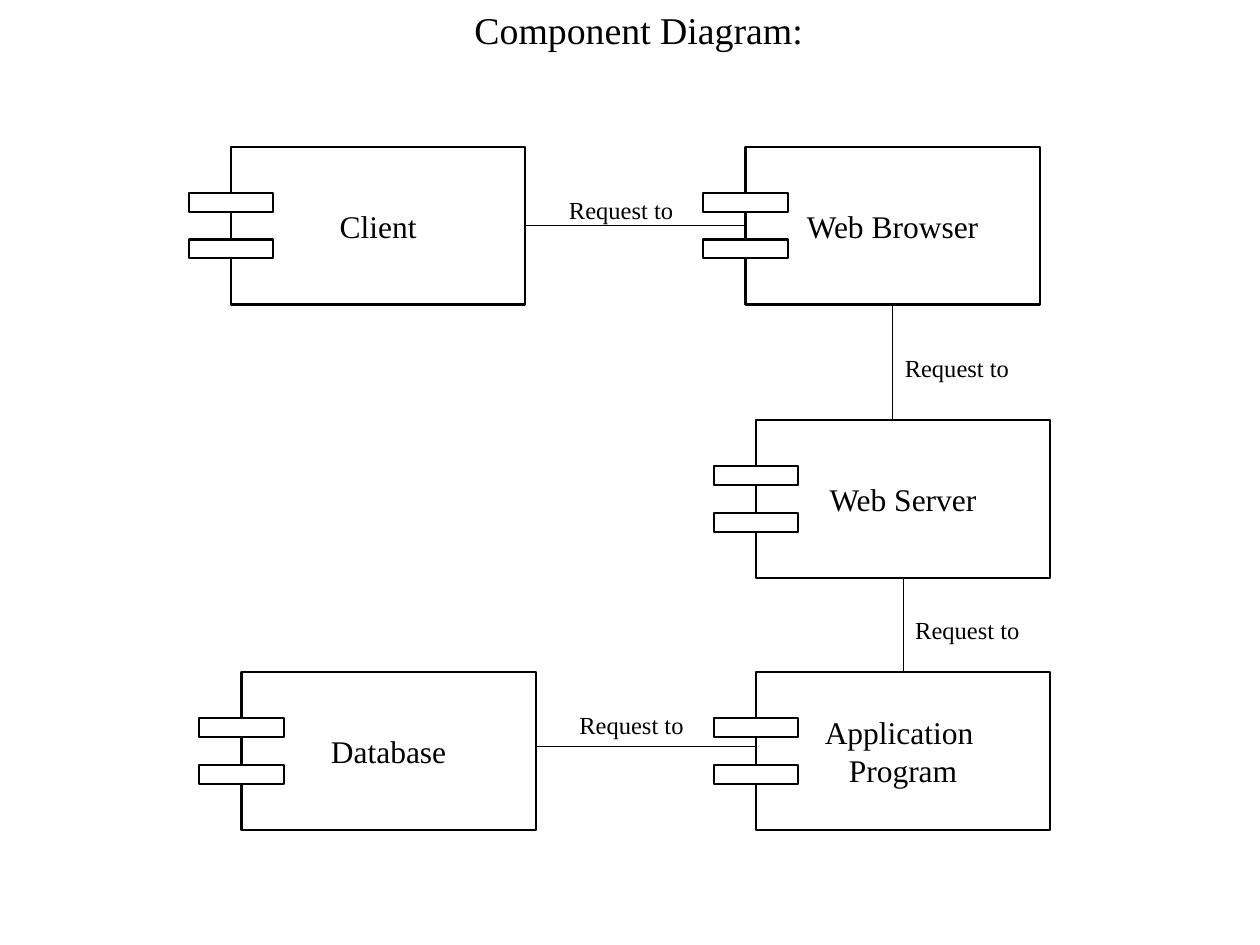
from dataclasses import dataclass

from lxml import etree
from pptx import Presentation
from pptx.dml.color import RGBColor
from pptx.enum.shapes import MSO_CONNECTOR, MSO_SHAPE
from pptx.enum.text import MSO_ANCHOR, MSO_AUTO_SIZE, PP_ALIGN
from pptx.oxml.ns import qn
from pptx.util import Cm, Pt

RECT = MSO_SHAPE.RECTANGLE
LINE = MSO_CONNECTOR.STRAIGHT
MIDDLE, TOP = MSO_ANCHOR.MIDDLE, MSO_ANCHOR.TOP
LEFT, CENTER = PP_ALIGN.LEFT, PP_ALIGN.CENTER
NO_FIT, GROW = MSO_AUTO_SIZE.NONE, MSO_AUTO_SIZE.SHAPE_TO_FIT_TEXT


@dataclass(frozen=True)
class Theme:
    ink: RGBColor = RGBColor(0, 0, 0)
    paper: RGBColor = RGBColor(255, 255, 255)
    font: str = "Times New Roman"
    title: float = 21.6
    body: float = 18
    label: float = 14
    edge: float = 1.25
    link: float = 0.5


@dataclass(frozen=True)
class Part:
    """A component; sizes and places are in centimetres."""
    text: str
    x: float
    y: float
    w: float = 5.93
    h: float = 3.18

    @property
    def mid(self) -> float:
        return self.x + self.w / 2


@dataclass(frozen=True)
class Link:
    start: tuple[float, float]
    end: tuple[float, float]
    label: tuple[float, float]


THEME = Theme()
LUG_X, LUG_W, LUG_H = -0.85, 1.7, 0.38
LUG_ROWS = (1.87, 0.93)
LABEL_W, LABEL_H = 2.74, 0.86

CLIENT = Part("Client", 4.66, 2.96)
BROWSER = Part("Web Browser", 15.03, 2.96)
DATA = Part("Database", 4.87, 13.55)
APP = Part("Application \nProgram", 15.24, 13.55)
SERVER = Part("Web Server", 15.24, 8.47)
PARTS = (CLIENT, BROWSER, DATA, APP, SERVER)


def across(a: Part, b: Part, drop: float, label: tuple[float, float]) -> Link:
    """Join two parts side by side, at a drop below their top edge."""
    return Link((a.x + a.w, a.y + drop), (b.x, a.y + drop), label)


def down(a: Part, b: Part, label: tuple[float, float]) -> Link:
    return Link((a.mid, a.y + a.h), (a.mid, b.y), label)


LINKS = (
    across(CLIENT, BROWSER, 1.59, (11.22, 3.81)),
    across(DATA, APP, 1.49, (11.43, 14.18)),
    down(BROWSER, SERVER, (17.99, 6.99)),
    down(SERVER, APP, (18.2, 12.28)),
)


def write(shape, text: str, size: float, align=LEFT, anchor=TOP, fit=NO_FIT) -> None:
    frame = shape.text_frame
    frame.text = text
    style = {"word_wrap": True, "auto_size": fit, "vertical_anchor": anchor}
    for key, value in style.items():
        setattr(frame, key, value)
    for para in frame.paragraphs:
        para.alignment = align
        for key, value in {"name": THEME.font, "size": Pt(size)}.items():
            setattr(para.font, key, value)
        para.font.color.rgb = THEME.ink


def box(shapes, x: float, y: float, w: float, h: float):
    shape = shapes.add_shape(RECT, Cm(x), Cm(y), Cm(w), Cm(h))
    shape.shadow.inherit = False
    shape.fill.solid()
    shape.fill.fore_color.rgb = THEME.paper
    shape.line.color.rgb = THEME.ink
    shape.line.width = Pt(THEME.edge)
    return shape


def draw_part(shapes, part: Part) -> None:
    """Draw the body of a component with its two lugs."""
    body = box(shapes, part.x, part.y, part.w, part.h)
    write(body, part.text, THEME.body, CENTER, MIDDLE)
    for row in LUG_ROWS:
        box(shapes, part.x + LUG_X, part.y + row, LUG_W, LUG_H)


def draw_link(shapes, link: Link) -> None:
    ends = (Cm(n) for n in link.start + link.end)
    line = shapes.add_connector(LINE, *ends)
    line.line.color.rgb = THEME.ink
    line.line.width = Pt(THEME.link)
    etree.SubElement(line._element.spPr, qn("a:effectLst"))


def draw_label(shapes, link: Link) -> None:
    x, y = link.label
    note = shapes.add_textbox(Cm(x), Cm(y), Cm(LABEL_W), Cm(LABEL_H))
    write(note, "Request to", THEME.label, fit=GROW)


def draw_title(shapes) -> None:
    title = shapes.title
    place = {"left": 9.31, "top": 0.21, "width": 7.83, "height": 0.89}
    for key, value in place.items():
        setattr(title, key, Cm(value))
    write(title, "Component Diagram:", THEME.title, anchor=MIDDLE)
    title.text_frame.paragraphs[0].line_spacing = 0.9


def main() -> None:
    deck = Presentation()
    deck.slide_width, deck.slide_height = Cm(25.4), Cm(19.05)
    shapes = deck.slides.add_slide(deck.slide_layouts[5]).shapes
    draw_title(shapes)
    for part in PARTS:
        draw_part(shapes, part)
    for link in LINKS:
        draw_link(shapes, link)
    for link in LINKS:
        draw_label(shapes, link)
    deck.save("out.pptx")


if __name__ == "__main__":
    main()
